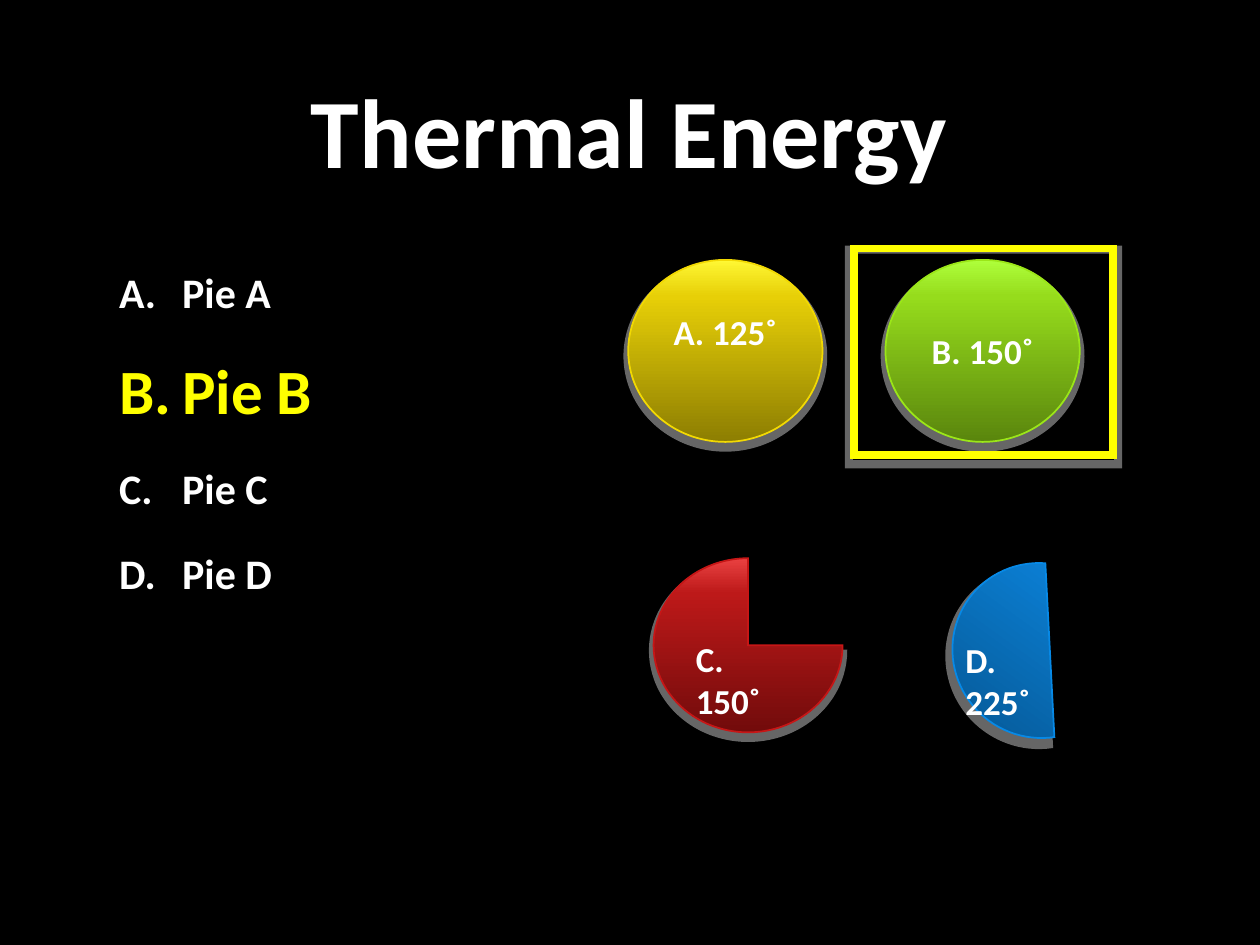
from lxml import etree
from pptx import Presentation
from pptx.dml.color import RGBColor
from pptx.enum.shapes import MSO_SHAPE
from pptx.enum.text import MSO_ANCHOR, PP_ALIGN
from pptx.oxml import parse_xml
from pptx.oxml.ns import nsdecls, qn
from pptx.util import Pt

ELLIPSE, PIE, CHORD, RECT = MSO_SHAPE.OVAL, MSO_SHAPE.PIE, MSO_SHAPE.CHORD, MSO_SHAPE.RECTANGLE
TOP, MIDDLE = MSO_ANCHOR.TOP, MSO_ANCHOR.MIDDLE
LEFT, CENTER = PP_ALIGN.LEFT, PP_ALIGN.CENTER

COLORS = {"background": "000000", "text": "FFFFFF", "answer": "FFFF00", "shadow": "808080"}
# Outline, then the gradient stops at 0, 20 and 100 percent
PIE_COLORS = {
    "A": ("F2D902", "FFF834", "E7CF07", "8D7E02"),
    "B": ("9BE618", "AEFF3B", "96DC1C", "5A860D"),
    "C": ("C61616", "E94141", "BD1919", "720B0B"),
    "D": ("0789E6", "3799FF", "0C84DC", "044F86"),
}
STOPS = (0, 20, 100)
ANGLE_UNIT = 0.6  # adjustment units per degree
LABEL_SIZE = 20


def rgb(value):
    return RGBColor.from_string(value)


def style(paragraph, size, color=COLORS["text"], align=LEFT):
    paragraph.alignment = align
    font = paragraph.font
    font.name, font.size, font.bold = "Calibri", Pt(size), True
    font.color.rgb = rgb(color)


def add_text(slide, box, text, size, align=LEFT, anchor=TOP):
    frame = slide.shapes.add_textbox(*map(Pt, box)).text_frame
    frame.word_wrap = True
    frame.vertical_anchor = anchor
    frame.text = text
    style(frame.paragraphs[0], size, align=align)


def add_shadow(shape):
    """Hard grey shadow, slightly larger than the shape and 3 pt below it."""
    shape.shadow.inherit = False
    effects = shape._element.spPr.find(qn("a:effectLst"))
    effects.append(parse_xml(
        f'<a:outerShdw {nsdecls("a")} blurRad="0" dist="{Pt(3)}" dir="5400000" sx="104000" '
        f'sy="104000" algn="ctr" rotWithShape="0"><a:srgbClr val="{COLORS["shadow"]}">'
        '<a:alpha val="80000"/></a:srgbClr></a:outerShdw>'))


def add_outline(shape, color, width):
    shape.line.color.rgb = rgb(color)
    shape.line.width = Pt(width)
    line = shape._element.spPr.find(qn("a:ln"))
    etree.SubElement(line, qn("a:miter")).set("lim", "800000")
    return line


def add_pie(slide, kind, box, letter, angles=(), rotation=0):
    outline, *shades = PIE_COLORS[letter]
    pie = slide.shapes.add_shape(kind, *map(Pt, box))
    for index, angle in enumerate(angles):
        pie.adjustments[index] = angle * ANGLE_UNIT
    pie.rotation = rotation
    line = add_outline(pie, outline, 1)
    stops = "".join(f'<a:gs pos="{stop * 1000}"><a:srgbClr val="{shade}"/></a:gs>'
                    for stop, shade in zip(STOPS, shades))
    line.addprevious(parse_xml(
        f'<a:gradFill {nsdecls("a")} rotWithShape="1"><a:gsLst>{stops}</a:gsLst>'
        '<a:lin ang="5400000" scaled="0"/></a:gradFill>'))
    add_shadow(pie)
    return pie


def add_whole_pie(slide, box, letter, label, lift=0):
    """Full pie with its label inside, moved up by half of lift."""
    frame = add_pie(slide, ELLIPSE, box, letter).text_frame
    frame.word_wrap = True
    frame.vertical_anchor = MIDDLE
    frame.margin_bottom = Pt(3.6 + lift)
    frame.text = label
    style(frame.paragraphs[0], LABEL_SIZE, align=CENTER)


def add_choices(slide, box, choices, answer):
    frame = slide.shapes.add_textbox(*map(Pt, box)).text_frame
    frame.word_wrap = True
    for index, choice in enumerate(choices):
        paragraph = frame.add_paragraph() if index else frame.paragraphs[0]
        paragraph.text = choice
        properties = paragraph._p.get_or_add_pPr()
        properties.set("marL", str(Pt(36)))
        properties.set("indent", str(Pt(-36)))
        etree.SubElement(properties, qn("a:buFont")).set("typeface", "+mj-lt")
        etree.SubElement(properties, qn("a:buAutoNum")).set("type", "alphaUcPeriod")
        if index:
            paragraph.space_before = Pt(20)
        if choice == answer:
            style(paragraph, 36, COLORS["answer"])
        else:
            style(paragraph, 24)


def add_pies(slide, box):
    left, top, width, height = box
    whole_width, whole_height = 111, 104
    pie_top = top + 6.5
    add_whole_pie(slide, (left, pie_top, whole_width, whole_height), "A", "A. 125˚", lift=22)
    add_whole_pie(slide, (left + 147, pie_top, whole_width, whole_height), "B", "B. 150˚")

    add_pie(slide, PIE, (left + 14.5, top + 177, 108, 99.5), "C", (0, 270))
    add_pie(slide, CHORD, (left + 185, top + 180, 101, 99.5), "D", (45, 237.5), 35.8)
    add_text(slide, (left + 31.5, top + 219, 68.4, 32), "C. 150˚", LABEL_SIZE)
    add_text(slide, (left + 185.6, top + 219.5, 72, 32), "D. 225˚", LABEL_SIZE)

    answer_frame = slide.shapes.add_shape(RECT, Pt(left + 129), Pt(top), Pt(148), Pt(118))
    answer_frame.fill.background()
    add_outline(answer_frame, COLORS["answer"], 4.5)
    add_shadow(answer_frame)


def main():
    deck = Presentation()
    deck.slide_width, deck.slide_height = Pt(720), Pt(540)
    slide = deck.slides.add_slide(deck.slide_layouts[6])
    slide.background.fill.solid()
    slide.background.fill.fore_color.rgb = rgb(COLORS["background"])
    add_text(slide, (61, 8.6, 597, 130.4), "Thermal Energy", 56, CENTER, MIDDLE)
    add_choices(slide, (61, 148.5, 140, 311), ["Pie A", "Pie B", "Pie C", "Pie D"], "Pie B")
    add_pies(slide, (359, 142, 286, 280))
    deck.save("out.pptx")


if __name__ == "__main__":
    main()
